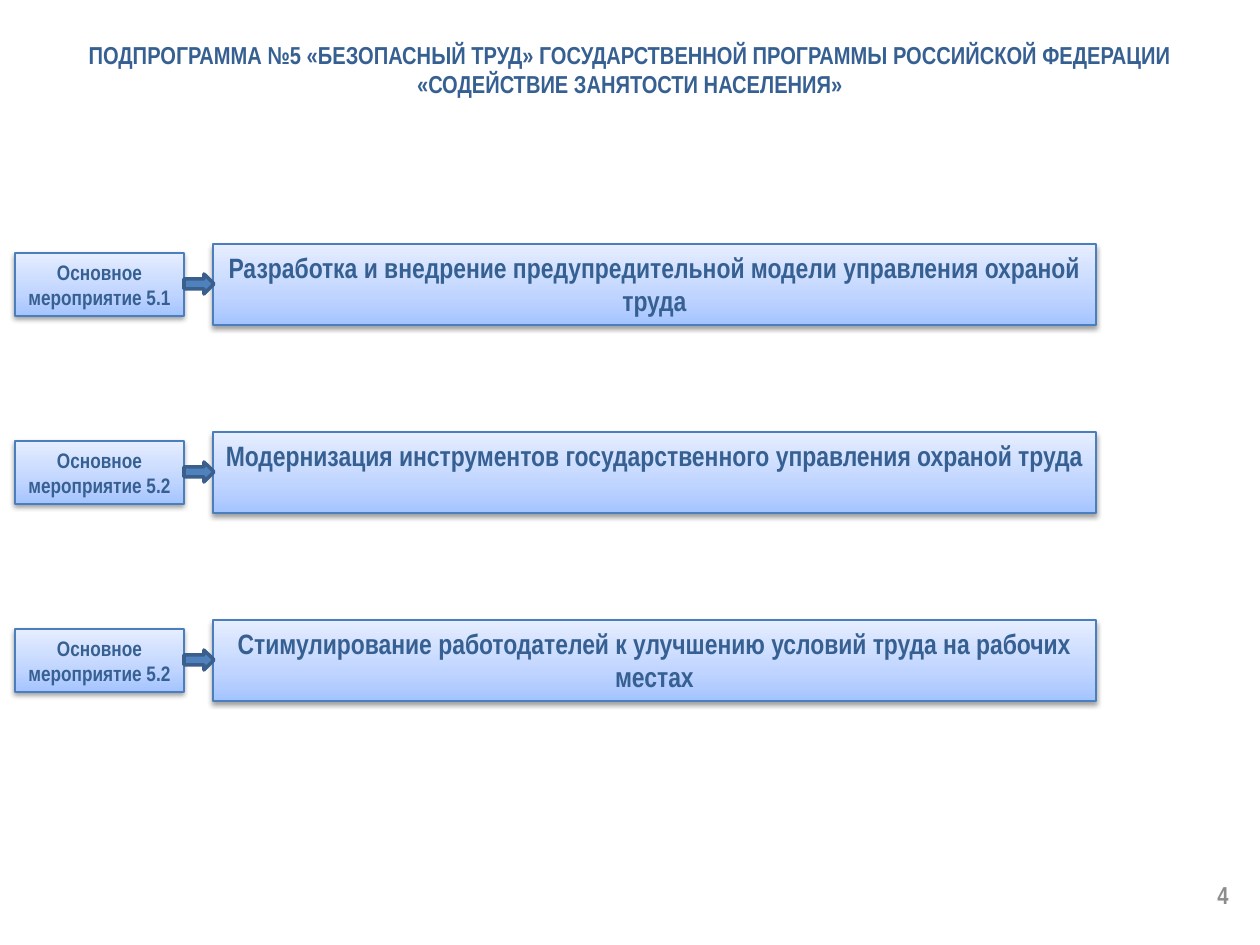
"""Build the slide on the main measures of the workplace safety subprogramme."""
from copy import deepcopy

from lxml.etree import SubElement
from pptx import Presentation
from pptx.dml.color import RGBColor
from pptx.enum.shapes import MSO_SHAPE
from pptx.enum.text import MSO_ANCHOR, PP_ALIGN
from pptx.oxml.ns import qn
from pptx.util import Pt

TITLE = ("ПОДПРОГРАММА №5 «БЕЗОПАСНЫЙ ТРУД» ГОСУДАРСТВЕННОЙ ПРОГРАММЫ "
         "РОССИЙСКОЙ ФЕДЕРАЦИИ «СОДЕЙСТВИЕ ЗАНЯТОСТИ НАСЕЛЕНИЯ»")
PAGE_NUMBER = "4"
MEASURES = [
    ("5.1", "Разработка и внедрение предупредительной модели управления охраной труда"),
    ("5.2", "Модернизация инструментов государственного управления охраной труда"),
    ("5.2", "Стимулирование работодателей к улучшению условий труда на рабочих местах"),
]

FONT = "Arial Narrow"
INK = RGBColor(0x37, 0x60, 0x92)
GREY = RGBColor(0x8C, 0x8C, 0x8C)
PANEL_LINE = RGBColor(0x4B, 0x7E, 0xBC)
ARROW_FILL = RGBColor(0x4F, 0x81, 0xBD)
ARROW_LINE = RGBColor(0x3A, 0x5F, 0x8C)
GRADIENT = [
    (0, RGBColor(0xA4, 0xC4, 0xFF)),
    (0.35, RGBColor(0xBF, 0xD4, 0xFF)),
    (1, RGBColor(0xE6, 0xEE, 0xFF)),
]

PX = 914400 / 126
FIRST_TOP, ROW_STEP = 244, 188
LABEL_LEFT, LABEL_WIDTH, LABEL_HEIGHT = 15, 169, 63
ARROW_WIDTH, ARROW_HEIGHT = 30, 20
BAR_LEFT, BAR_WIDTH, BAR_HEIGHT = 213, 883, 81


def px(*lengths):
    return [round(length * PX) for length in lengths]


def write(box, lines, size, color=INK, align=PP_ALIGN.CENTER, anchor=MSO_ANCHOR.TOP):
    frame = box.text_frame
    frame.word_wrap = True
    frame.vertical_anchor = anchor
    for index, line in enumerate(lines):
        para = frame.add_paragraph() if index else frame.paragraphs[0]
        para.alignment = align
        span = para.add_run()
        span.text = line
        span.font.name = FONT
        span.font.size = Pt(size)
        span.font.bold = True
        span.font.color.rgb = color


def add_shape(page, kind, area, line_color, line_width):
    shape = page.shapes.add_shape(kind, *px(*area))
    shape.shadow.inherit = False
    shape.line.color.rgb = line_color
    shape.line.width = Pt(line_width)
    return shape


def add_panel(page, area, lines, size):
    panel = add_shape(page, MSO_SHAPE.RECTANGLE, area, PANEL_LINE, 0.75)
    panel.fill.gradient()
    panel.fill.gradient_angle = 90
    properties = panel.element.spPr
    stop_list = properties.find(".//" + qn("a:gsLst"))
    stop_list.append(deepcopy(stop_list[-1]))
    for stop, (position, color) in zip(panel.fill.gradient_stops, GRADIENT):
        stop.position = position
        stop.color.rgb = color
    shadow = SubElement(properties.find(qn("a:effectLst")), qn("a:outerShdw"),
                        blurRad=str(Pt(3.1)), dist=str(Pt(1.6)),
                        dir="5400000", rotWithShape="0")
    shade = SubElement(shadow, qn("a:srgbClr"), val="000000")
    SubElement(shade, qn("a:alpha"), val="38000")
    write(panel, lines, size)


def add_measure(page, top, number, text):
    middle = top + BAR_HEIGHT // 2
    add_panel(page, (BAR_LEFT, top, BAR_WIDTH, BAR_HEIGHT), [text], 16)
    add_panel(page, (LABEL_LEFT, middle - LABEL_HEIGHT // 2, LABEL_WIDTH, LABEL_HEIGHT),
              ["Основное", f"мероприятие {number}"], 12)
    area = (LABEL_LEFT + LABEL_WIDTH, middle - ARROW_HEIGHT // 2, ARROW_WIDTH, ARROW_HEIGHT)
    arrow = add_shape(page, MSO_SHAPE.RIGHT_ARROW, area, ARROW_LINE, 2)
    arrow.fill.solid()
    arrow.fill.fore_color.rgb = ARROW_FILL


def main():
    deck = Presentation()
    deck.slide_width, deck.slide_height = px(1260, 945)
    page = deck.slides.add_slide(deck.slide_layouts[5])
    title = page.shapes.title
    title.left, title.top, title.width, title.height = px(63, 33, 1134, 72)
    write(title, [TITLE], 14, anchor=MSO_ANCHOR.MIDDLE)
    for row, (number, text) in enumerate(MEASURES):
        add_measure(page, FIRST_TOP + row * ROW_STEP, number, text)
    number_box = page.shapes.add_textbox(*px(948, 870, 293, 50))
    write(number_box, [PAGE_NUMBER], 14, GREY, PP_ALIGN.RIGHT, MSO_ANCHOR.MIDDLE)
    deck.save("out.pptx")


if __name__ == "__main__":
    main()
